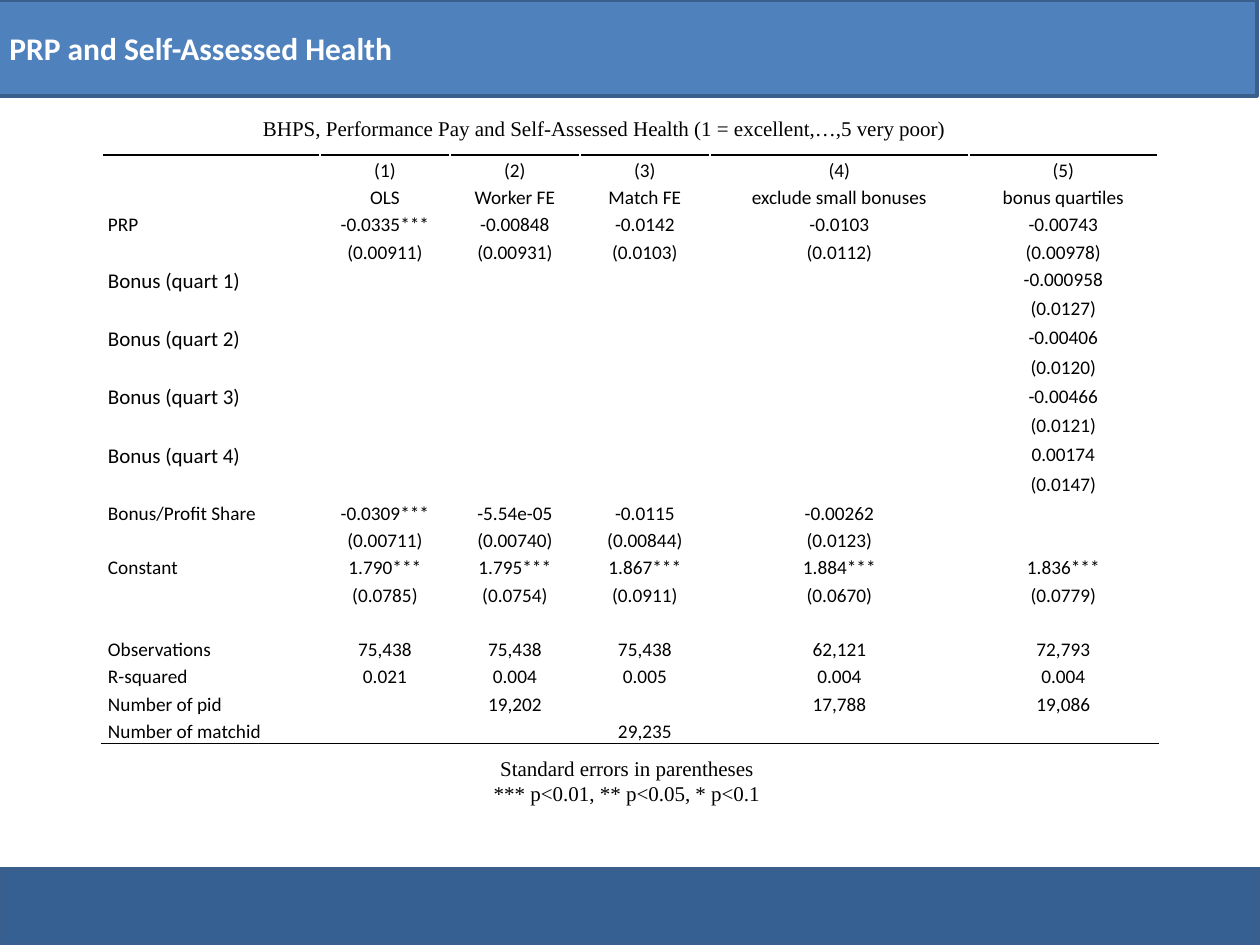
from lxml import etree
from pptx import Presentation
from pptx.dml.color import RGBColor
from pptx.enum.shapes import MSO_SHAPE
from pptx.enum.text import MSO_ANCHOR, MSO_AUTO_SIZE, PP_ALIGN
from pptx.oxml.ns import qn
from pptx.util import Emu, Pt

RECTANGLE = MSO_SHAPE.RECTANGLE
MIDDLE = MSO_ANCHOR.MIDDLE
FIT_SHAPE = MSO_AUTO_SIZE.SHAPE_TO_FIT_TEXT
LEFT, CENTER = PP_ALIGN.LEFT, PP_ALIGN.CENTER

PX = 914400 // 126
COLORS = {
    "header": "4F81BD",
    "footer": "376092",
    "outline": "3A5F8C",
    "white": "FFFFFF",
    "black": "000000",
}
TITLE_FORMAT = {"name": "Calibri", "size": Pt(18), "bold": True}
NOTE_FORMAT = {"name": "Times New Roman", "size": Pt(12)}
CELL_FORMAT = {"name": "Calibri", "size": Pt(11)}
QUARTILE_FORMAT = {"name": "Calibri", "size": Pt(12)}

COLUMN_WIDTHS = [218, 130, 130, 130, 259, 189]
ROW_HEIGHT, QUARTILE_ROW_HEIGHT = 27, 29
QUARTILE_ROWS = range(4, 12)
ROWS = [
    ["", "(1)", "(2)", "(3)", "(4)", "(5)"],
    ["", "OLS", "Worker FE", "Match FE", "exclude small bonuses", "bonus quartiles"],
    ["PRP", "-0.0335***", "-0.00848", "-0.0142", "-0.0103", "-0.00743"],
    ["", "(0.00911)", "(0.00931)", "(0.0103)", "(0.0112)", "(0.00978)"],
    ["Bonus (quart 1)", "", "", "", "", "-0.000958"],
    ["", "", "", "", "", "(0.0127)"],
    ["Bonus (quart 2)", "", "", "", "", "-0.00406"],
    ["", "", "", "", "", "(0.0120)"],
    ["Bonus (quart 3)", "", "", "", "", "-0.00466"],
    ["", "", "", "", "", "(0.0121)"],
    ["Bonus (quart 4)", "", "", "", "", "0.00174"],
    ["", "", "", "", "", "(0.0147)"],
    ["Bonus/Profit Share", "-0.0309***", "-5.54e-05", "-0.0115", "-0.00262", ""],
    ["", "(0.00711)", "(0.00740)", "(0.00844)", "(0.0123)", ""],
    ["Constant", "1.790***", "1.795***", "1.867***", "1.884***", "1.836***"],
    ["", "(0.0785)", "(0.0754)", "(0.0911)", "(0.0670)", "(0.0779)"],
    ["", "", "", "", "", ""],
    ["Observations", "75,438", "75,438", "75,438", "62,121", "72,793"],
    ["R-squared", "0.021", "0.004", "0.005", "0.004", "0.004"],
    ["Number of pid", "", "19,202", "", "17,788", "19,086"],
    ["Number of matchid", "", "", "29,235", "", ""],
]


def to_emu(box):
    return [Emu(length * PX) for length in box]


def color(name):
    return RGBColor.from_string(COLORS[name])


def write_paragraph(paragraph, text, values, color_name, alignment):
    paragraph.alignment = alignment
    run = paragraph.add_run()
    run.text = text
    for name, value in values.items():
        setattr(run.font, name, value)
    run.font.color.rgb = color(color_name)


def add_band(slide, box, fill_name, title=None):
    shape = slide.shapes.add_shape(RECTANGLE, *to_emu(box))
    shape.shadow.inherit = False
    shape.fill.solid()
    shape.fill.fore_color.rgb = color(fill_name)
    shape.line.color.rgb = color("outline")
    shape.line.width = Pt(2)
    if title:
        shape.text_frame.vertical_anchor = MIDDLE
        write_paragraph(shape.text_frame.paragraphs[0], title, TITLE_FORMAT, "white", LEFT)


def add_note(slide, box, lines):
    frame = slide.shapes.add_textbox(*to_emu(box)).text_frame
    frame.word_wrap = False
    frame.auto_size = FIT_SHAPE
    frame.vertical_anchor = MIDDLE
    for index, line in enumerate(lines):
        paragraph = frame.add_paragraph() if index else frame.paragraphs[0]
        write_paragraph(paragraph, line, NOTE_FORMAT, "black", CENTER)


def add_border(cell, tag):
    line = etree.Element(qn(tag), w=str(Pt(1)))
    fill = etree.SubElement(line, qn("a:solidFill"))
    etree.SubElement(fill, qn("a:srgbClr"), val=COLORS["black"])
    cell._tc.get_or_add_tcPr().insert(0, line)


def fill_cell(cell, text, values, alignment):
    margins = {"margin_left": 6, "margin_right": 6, "margin_top": 0, "margin_bottom": 0}
    for name, value in margins.items():
        setattr(cell, name, Emu(value * PX))
    cell.fill.background()
    paragraph = cell.text_frame.paragraphs[0]
    paragraph.line_spacing = 1.15
    if text:
        write_paragraph(paragraph, text, values, "black", alignment)
    else:
        paragraph._p.get_or_add_endParaRPr().set("sz", "1100")


def add_results_table(slide, left, top):
    heights = [
        QUARTILE_ROW_HEIGHT if index in QUARTILE_ROWS else ROW_HEIGHT
        for index in range(len(ROWS))
    ]
    box = to_emu([left, top, sum(COLUMN_WIDTHS), sum(heights)])
    table = slide.shapes.add_table(len(ROWS), len(COLUMN_WIDTHS), *box).table
    table.first_row = table.horz_banding = False
    for column, width in zip(table.columns, COLUMN_WIDTHS):
        column.width = Emu(width * PX)
    for row_index, (row, height) in enumerate(zip(table.rows, heights)):
        row.height = Emu(height * PX)
        for column_index, cell in enumerate(row.cells):
            is_label = column_index == 0
            is_quartile = is_label and row_index in QUARTILE_ROWS
            values = QUARTILE_FORMAT if is_quartile else CELL_FORMAT
            alignment = LEFT if is_label else CENTER
            fill_cell(cell, ROWS[row_index][column_index], values, alignment)
    for cell in table.rows[0].cells:
        add_border(cell, "a:lnT")
    for cell in table.rows[len(ROWS) - 1].cells:
        add_border(cell, "a:lnB")


def main():
    presentation = Presentation()
    presentation.slide_width, presentation.slide_height = to_emu([1260, 945])
    slide = presentation.slides.add_slide(presentation.slide_layouts[6])
    add_band(slide, [-3, 0, 1260, 96], "header", "PRP and Self-Assessed Health")
    add_band(slide, [0, 869, 1260, 76], "footer")
    add_results_table(slide, 102, 155)
    add_note(
        slide,
        [-3, 749, 1260, 63],
        ["Standard errors in parentheses", "*** p<0.01, ** p<0.05, * p<0.1"],
    )
    add_note(
        slide,
        [247, 109, 715, 38],
        ["BHPS, Performance Pay and Self-Assessed Health (1 = excellent,…,5 very poor)"],
    )
    presentation.save("out.pptx")


if __name__ == "__main__":
    main()
